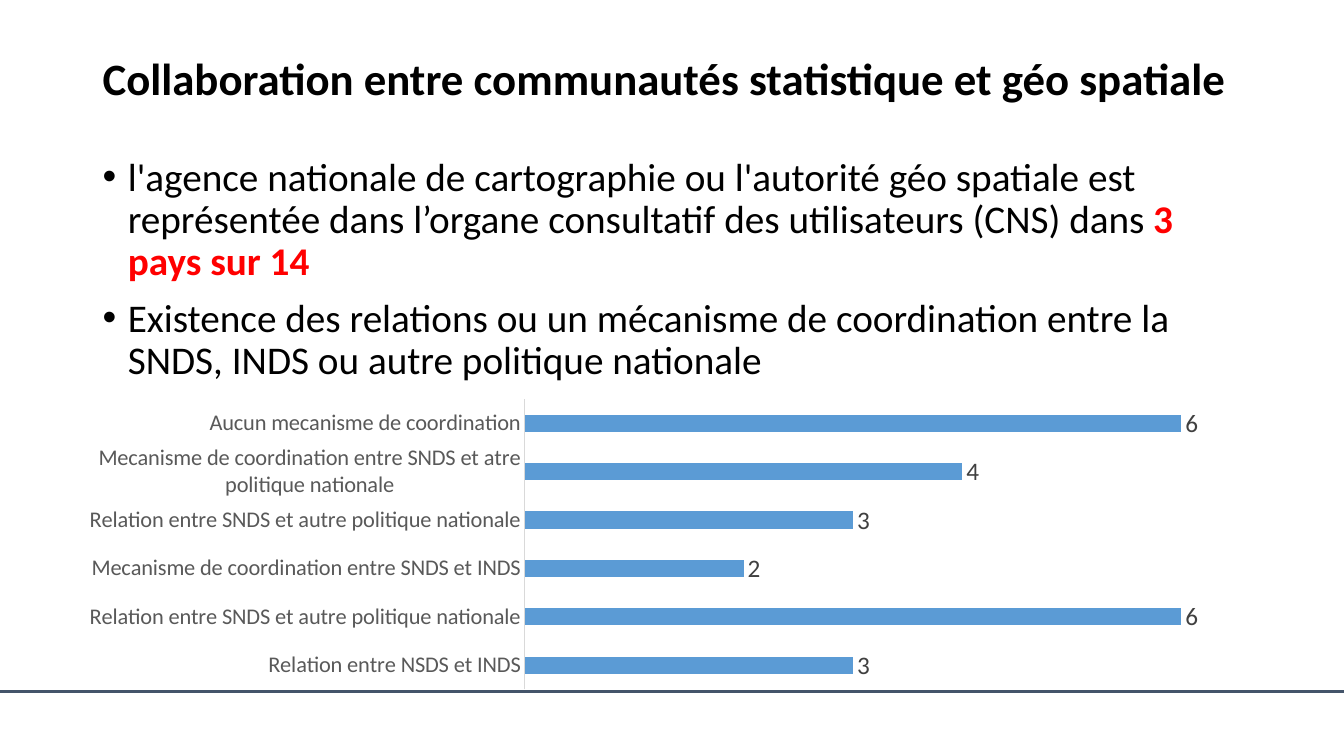
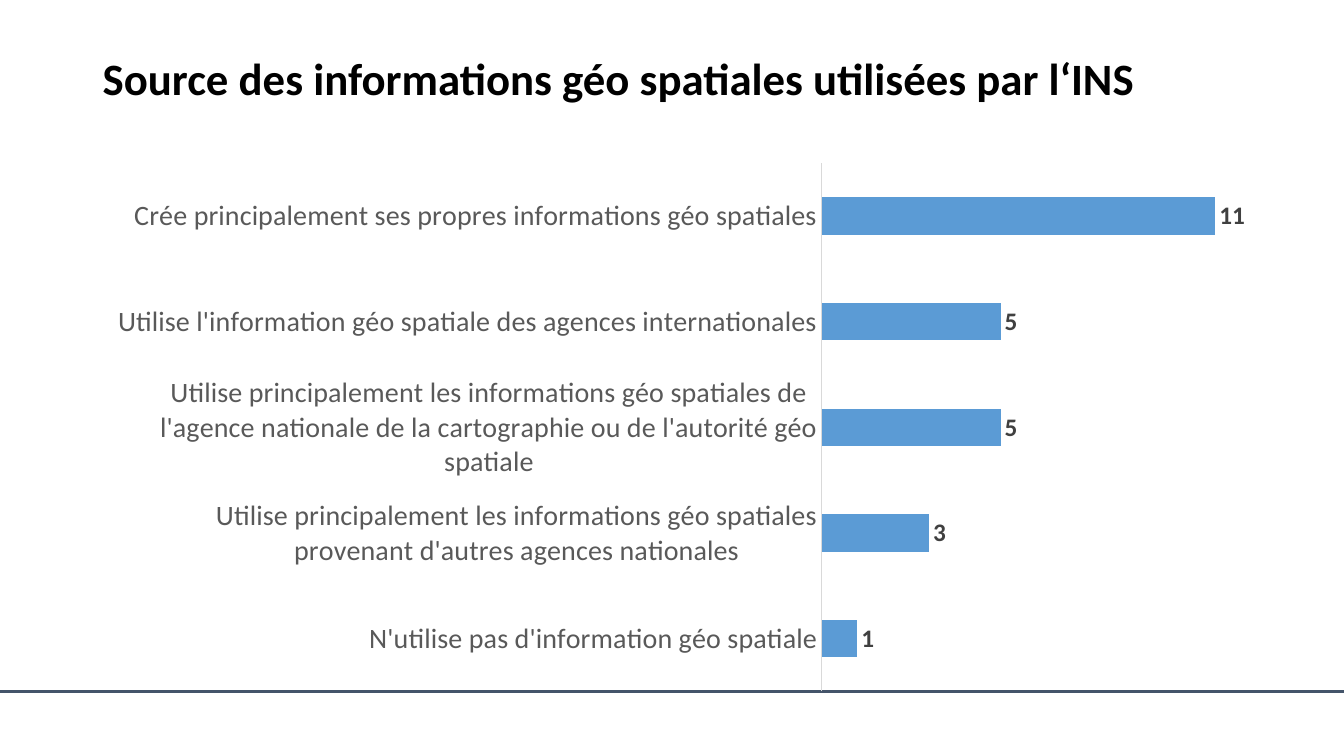
from lxml import etree
from pptx import Presentation
from pptx import util as u
from pptx.chart import data as chart_data
from pptx.dml import color
from pptx.enum import chart as ec
from pptx.enum import shapes, text
from pptx.oxml import ns

FONT = "Calibri"
COLORS = {
    "text": "000000",
    "accent": "FF0000",
    "rule": "44546A",
    "bar": "5B9BD5",
    "category": "595959",
    "value": "404040",
    "axis": "D9D9D9",
}
SLIDE_W, SLIDE_H = 13.33, 7.5
TITLE_BOX = (0.92, 0.4, 11.5, 0.8)
RULE_Y = 6.86


def rgb(name):
    return color.RGBColor.from_string(COLORS[name])


def inches(box):
    return [u.Inches(length) for length in box]


def style_font(font, size, ink="text", bold=False):
    font.name = FONT
    font.size = u.Pt(size)
    font.bold = bold
    font.color.rgb = rgb(ink)


def add_bullet(paragraph):
    props = paragraph._p.get_or_add_pPr()
    props.set("marL", str(u.Inches(0.25)))
    props.set("indent", str(u.Inches(-0.25)))
    bullet_font = etree.SubElement(props, ns.qn("a:buFont"))
    bullet_font.set("typeface", "Arial")
    etree.SubElement(props, ns.qn("a:buChar")).set("char", "•")


def add_text(slide, box, paragraphs, size, bold=False, bullets=False,
             anchor=text.MSO_ANCHOR.TOP):
    """Each paragraph is a list of (words, is_highlighted) runs."""
    frame = slide.shapes.add_textbox(*inches(box)).text_frame
    frame.word_wrap = True
    frame.vertical_anchor = anchor
    for index, runs in enumerate(paragraphs):
        paragraph = frame.add_paragraph() if index else frame.paragraphs[0]
        if bullets:
            add_bullet(paragraph)
        paragraph.line_spacing = 0.9
        paragraph.space_before = u.Pt(10 if index else 0)
        for words, highlighted in runs:
            run = paragraph.add_run()
            run.text = words
            style_font(run.font, size, "accent" if highlighted else "text",
                       bold or highlighted)


def add_base_slide(prs, title):
    """Blank slide with the shared footer rule and title."""
    slide = prs.slides.add_slide(prs.slide_layouts[6])
    rule = slide.shapes.add_connector(
        shapes.MSO_CONNECTOR.STRAIGHT,
        *inches((0, RULE_Y, SLIDE_W, RULE_Y)))
    rule.line.color.rgb = rgb("rule")
    rule.line.width = u.Pt(1.5)
    etree.SubElement(rule._element.spPr, ns.qn("a:effectLst"))
    add_text(slide, TITLE_BOX, [[(title, False)]], size=32, bold=True,
             anchor=text.MSO_ANCHOR.MIDDLE)
    return slide


def add_bar_chart(slide, box, answers, axis_max, category_size,
                  bold_values=False):
    """Horizontal bars; answers run from bottom to top."""
    counts = chart_data.CategoryChartData()
    counts.categories = [label for label, _ in answers]
    counts.add_series("Series 1", [count for _, count in answers])
    chart = slide.shapes.add_chart(
        ec.XL_CHART_TYPE.BAR_CLUSTERED, *inches(box), counts).chart
    chart.has_legend = False
    chart.has_title = False
    style_font(chart.font, 10)

    # Axes
    categories = chart.category_axis
    categories.major_tick_mark = ec.XL_TICK_MARK.NONE
    categories.minor_tick_mark = ec.XL_TICK_MARK.NONE
    categories.format.line.color.rgb = rgb("axis")
    categories.format.line.width = u.Pt(0.75)
    style_font(categories.tick_labels.font, category_size, "category")
    values = chart.value_axis
    values.minimum_scale = 0
    values.maximum_scale = axis_max
    values.has_major_gridlines = False
    values.visible = False

    # Bars and their values
    plot = chart.plots[0]
    plot.gap_width = 182
    plot.vary_by_categories = False
    bars = plot.series[0]
    bars.format.fill.solid()
    bars.format.fill.fore_color.rgb = rgb("bar")
    labels = bars.data_labels
    labels.show_value = True
    labels.position = ec.XL_LABEL_POSITION.OUTSIDE_END
    style_font(labels.font, 18, "value", bold_values)


def build_collaboration(prs):
    slide = add_base_slide(
        prs, "Collaboration entre communautés statistique et géo spatiale")
    findings = [
        [("l'agence nationale de cartographie ou l'autorité géo spatiale est "
          "représentée dans l’organe consultatif des utilisateurs (CNS) dans ",
          False),
         ("3 pays sur 14", True)],
        [("Existence des relations ou un mécanisme de coordination entre la "
          "SNDS, INDS ou autre politique nationale", False)],
    ]
    add_text(slide, (0.92, 1.51, 11.5, 2.39), findings, size=28, bullets=True)
    mechanisms = [
        ("Relation entre NSDS et INDS", 3),
        ("Relation entre SNDS et autre politique nationale", 6),
        ("Mecanisme de coordination entre SNDS et INDS", 2),
        ("Relation entre SNDS et autre politique nationale", 3),
        ("Mecanisme de coordination entre SNDS et atre politique nationale",
         4),
        ("Aucun mecanisme de coordination", 6),
    ]
    add_bar_chart(slide, (0.64, 3.9, 12.41, 3), mechanisms,
                  axis_max=7, category_size=16)


def build_sources(prs):
    slide = add_base_slide(
        prs, "Source des informations géo spatiales utilisées par l‘INS")
    sources = [
        ("N'utilise pas d'information géo spatiale", 1),
        ("Utilise principalement les informations géo spatiales provenant "
         "d'autres agences nationales", 3),
        ("Utilise principalement les informations géo spatiales de l'agence "
         "nationale de la cartographie ou de l'autorité géo spatiale", 5),
        ("Utilise l'information géo spatiale des agences internationales", 5),
        ("Crée principalement ses propres informations géo spatiales", 11),
    ]
    add_bar_chart(slide, (1.1, 1.51, 11.54, 5.46), sources,
                  axis_max=12, category_size=20, bold_values=True)


def main():
    prs = Presentation()
    prs.slide_width, prs.slide_height = inches((SLIDE_W, SLIDE_H))
    build_collaboration(prs)
    build_sources(prs)
    prs.save("out.pptx")


if __name__ == "__main__":
    main()
